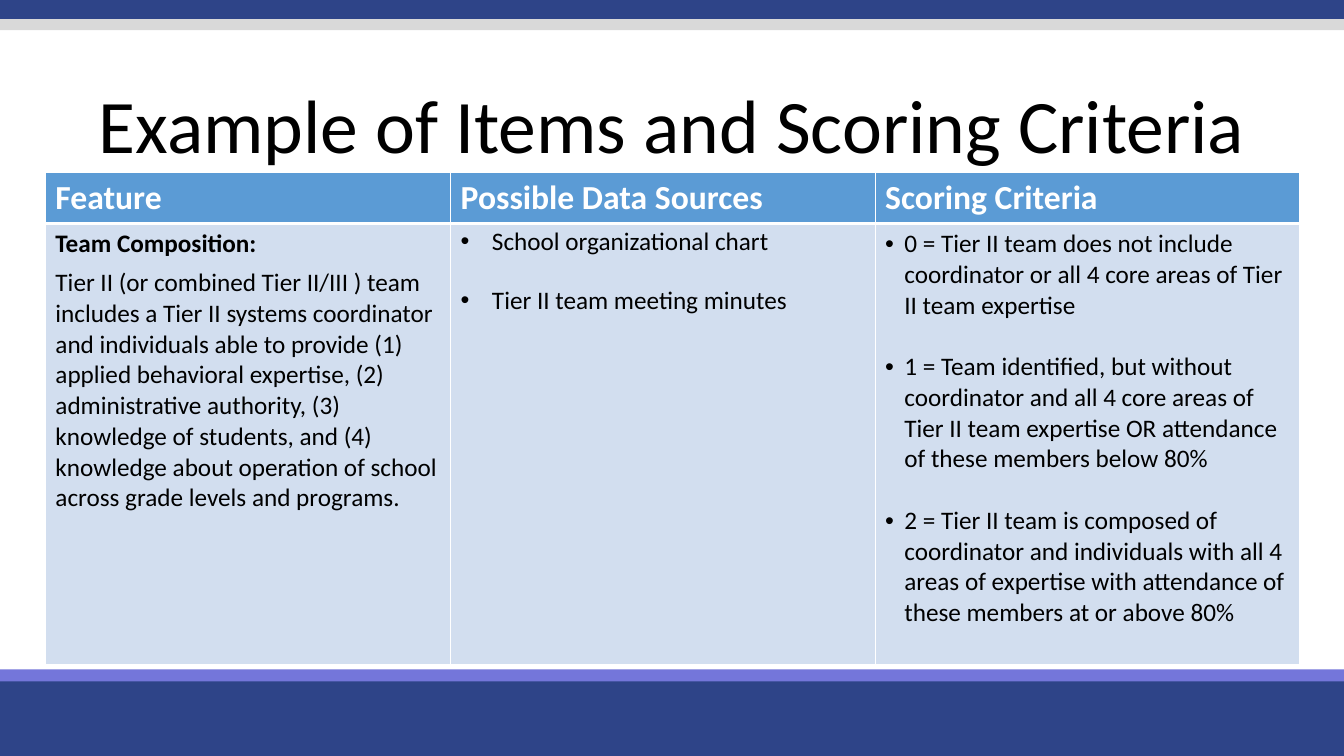
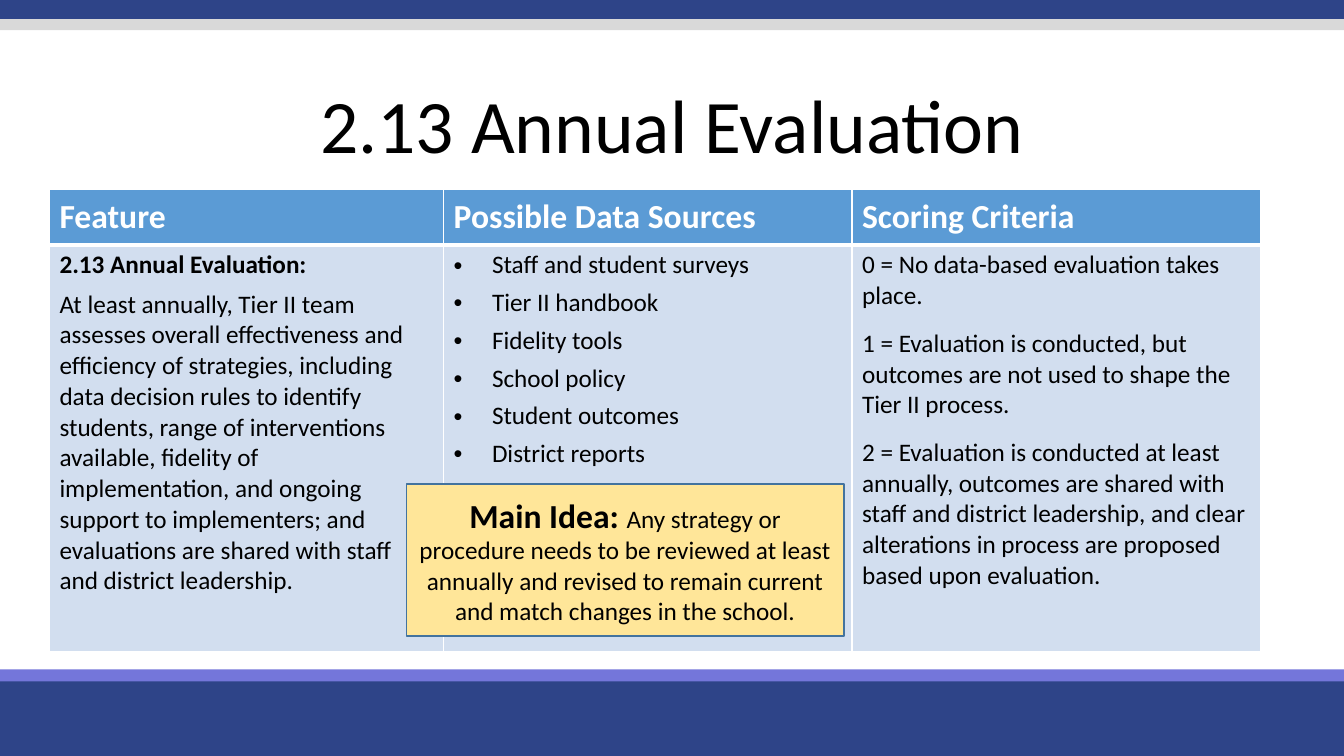
from dataclasses import dataclass

from lxml import etree
from pptx import Presentation
from pptx.dml.color import RGBColor
from pptx.enum import shapes, text
from pptx.oxml import ns
from pptx.util import Inches, Pt

NAVY = RGBColor(0x2E, 0x44, 0x88)
VIOLET = RGBColor(0x74, 0x76, 0xDA)
SILVER = RGBColor(0xD9, 0xD9, 0xD9)
HEADER_BLUE = RGBColor(0x5B, 0x9B, 0xD5)
BODY_BLUE = RGBColor(0xD2, 0xDE, 0xEF)
CALLOUT_YELLOW = RGBColor(0xFF, 0xE6, 0x99)
CALLOUT_EDGE = RGBColor(0x43, 0x73, 0x9E)
WHITE = RGBColor(0xFF, 0xFF, 0xFF)
BLACK = RGBColor(0, 0, 0)

FONT = "Calibri"
WIDTH, HEIGHT = 13.33, 7.5
BANDS = [(6.7, 0.8, NAVY), (6.64, 0.12, VIOLET), (-0.03, 0.22, NAVY), (0.19, 0.11, SILVER)]
HEADINGS = ["Feature", "Possible Data Sources", "Scoring Criteria"]


@dataclass
class Body:
    """Paragraphs of one table cell; a hanging indent (inches) brings bullets."""
    texts: list
    after: float
    before: float = 0
    indent: float = 0
    spacing: float = 1.0
    lead_bold: bool = False


class Deck:
    def __init__(self):
        self.deck = Presentation()
        self.deck.slide_width = Inches(WIDTH)
        self.deck.slide_height = Inches(HEIGHT)
        self.layout = self.deck.slide_layouts[5]
        self.page = None

    def start_page(self, title):
        first = self.page is None
        self.page = self.deck.slides.add_slide(self.layout)
        if first:
            self.add_bands()
        box = self.page.shapes.title
        box.left, box.top = Inches(0), Inches(0.69)
        box.width, box.height = Inches(WIDTH), Inches(1.18)
        frame = box.text_frame
        frame.text = title
        frame.auto_size = text.MSO_AUTO_SIZE.NONE
        frame.vertical_anchor = text.MSO_ANCHOR.MIDDLE
        para = frame.paragraphs[0]
        para.alignment = text.PP_ALIGN.CENTER
        para.line_spacing = 0.9
        self.style(para.runs[0], 54)

    def add_bands(self):
        """Draw the bands and move them to the layout, behind its placeholders."""
        tree = self.layout.shapes.element
        for order, (top, height, color) in enumerate(BANDS):
            band = self.rectangle(0, top, WIDTH, height, color)
            identity = band.element.xpath("./p:nvSpPr/p:cNvPr")[0]
            identity.set("id", str(100 + order))
            tree.insert(2 + order, band.element)

    def rectangle(self, left, top, width, height, color):
        box = self.page.shapes.add_shape(
            shapes.MSO_SHAPE.RECTANGLE, Inches(left), Inches(top), Inches(width), Inches(height))
        box.shadow.inherit = False
        box.fill.solid()
        box.fill.fore_color.rgb = color
        box.line.fill.background()
        return box

    def style(self, span, size, color=BLACK, bold=False):
        span.font.name = FONT
        span.font.size = Pt(size)
        span.font.color.rgb = color
        span.font.bold = bold

    def add_table(self, left, top, columns, rows, bodies):
        frame = self.page.shapes.add_table(
            len(rows), len(columns), Inches(left), Inches(top),
            Inches(sum(columns)), Inches(sum(rows)))
        table = frame.table
        table.horz_banding = False
        for column, width in zip(table.columns, columns):
            column.width = Inches(width)
        for row, height in zip(table.rows, rows):
            row.height = Inches(height)
        for index, (heading, body) in enumerate(zip(HEADINGS, bodies)):
            self.fill_heading(table.cell(0, index), heading)
            self.fill_body(table.cell(1, index), body)

    def fill_heading(self, cell, heading):
        self.paint(cell, HEADER_BLUE, bottom=3)
        cell.vertical_anchor = text.MSO_ANCHOR.MIDDLE
        cell.text_frame.text = heading
        self.style(cell.text_frame.paragraphs[0].runs[0], 24, WHITE, True)

    def fill_body(self, cell, body):
        self.paint(cell, BODY_BLUE, top=3)
        cell.text_frame.text = "\n".join(body.texts)
        for index, para in enumerate(cell.text_frame.paragraphs):
            if body.indent:
                self.add_bullet(para, body.indent)
            para.line_spacing = body.spacing
            para.space_before = Pt(body.before if index else 0)
            para.space_after = Pt(body.after)
            self.style(para.runs[0], 18, bold=body.lead_bold and index == 0)

    def add_bullet(self, para, indent):
        properties = para._p.get_or_add_pPr()
        properties.set("marL", str(Inches(indent)))
        properties.set("indent", str(-Inches(indent)))
        etree.SubElement(properties, ns.qn("a:buFont"), typeface="Arial")
        etree.SubElement(properties, ns.qn("a:buChar"), char="•")

    def paint(self, cell, color, top=1, bottom=1):
        """Give a cell white borders (points) and a solid fill."""
        properties = cell._tc.get_or_add_tcPr()
        for side, width in (("L", 1), ("R", 1), ("T", top), ("B", bottom)):
            edge = etree.SubElement(properties, ns.qn("a:ln" + side), w=str(Pt(width)))
            fill = etree.SubElement(edge, ns.qn("a:solidFill"))
            etree.SubElement(fill, ns.qn("a:srgbClr"), val=str(WHITE))
        cell.fill.solid()
        cell.fill.fore_color.rgb = color

    def add_callout(self, left, top, width, height, lead, message):
        box = self.rectangle(left, top, width, height, CALLOUT_YELLOW)
        box.line.color.rgb = CALLOUT_EDGE
        box.line.width = Pt(1)
        frame = box.text_frame
        frame.word_wrap = True
        frame.vertical_anchor = text.MSO_ANCHOR.MIDDLE
        para = frame.paragraphs[0]
        para.alignment = text.PP_ALIGN.CENTER
        for words, size, bold in ((lead, 24, True), (message, 18, False)):
            span = para.add_run()
            span.text = words
            self.style(span, size, bold=bold)


def add_scoring_example(deck):
    deck.start_page("Example of Items and Scoring Criteria")
    feature = Body([
        "Team Composition:",
        "Tier II (or combined Tier II/III ) team includes a Tier II systems coordinator and "
        "individuals able to provide (1) applied behavioral expertise, (2) administrative "
        "authority, (3) knowledge of students, and (4) knowledge about operation of school "
        "across grade levels and programs.",
    ], after=6, lead_bold=True)
    sources = Body(["School organizational chart", "Tier II team meeting minutes"],
                   after=12, before=10, indent=0.31, spacing=0.9)
    criteria = Body([
        "0 = Tier II team does not include coordinator or all 4 core areas of Tier II team "
        "expertise",
        "1 = Team identified, but without coordinator and all 4 core areas of Tier II team "
        "expertise OR attendance of these members below 80%",
        "2 = Tier II team is composed of coordinator and individuals with all 4 areas of "
        "expertise with attendance of these members at or above 80%",
    ], after=12, before=10, indent=0.19)
    deck.add_table(0.45, 1.71, [4.02, 4.21, 4.21], [0.5, 4.38], [feature, sources, criteria])


def add_annual_evaluation(deck):
    deck.start_page("2.13 Annual Evaluation")
    feature = Body([
        "2.13 Annual Evaluation:",
        "At least annually, Tier II team assesses overall effectiveness and efficiency of "
        "strategies, including data decision rules to identify students, range of "
        "interventions available, fidelity of implementation, and ongoing support to "
        "implementers; and evaluations are shared with staff and district leadership.",
    ], after=6, lead_bold=True)
    sources = Body(["Staff and student surveys", "Tier II handbook", "Fidelity tools",
                    "School policy", "Student outcomes", "District reports"],
                   after=5, indent=0.38)
    criteria = Body([
        "0 = No data-based evaluation takes place.",
        "1 = Evaluation is conducted, but outcomes are not used to shape the Tier II process.",
        "2 = Evaluation is conducted at least annually, outcomes are shared with staff and "
        "district leadership, and clear alterations in process are proposed based upon "
        "evaluation.",
    ], after=12)
    deck.add_table(0.49, 1.88, [3.91, 4.05, 4.05], [0.55, 4.03], [feature, sources, criteria])
    deck.add_callout(
        4.03, 4.8, 4.34, 1.51, "Main Idea: ",
        "Any strategy or procedure needs to be reviewed at least annually and revised to "
        "remain current and match changes in the school.")


def main():
    deck = Deck()
    add_scoring_example(deck)
    add_annual_evaluation(deck)
    deck.deck.save("out.pptx")


if __name__ == "__main__":
    main()
